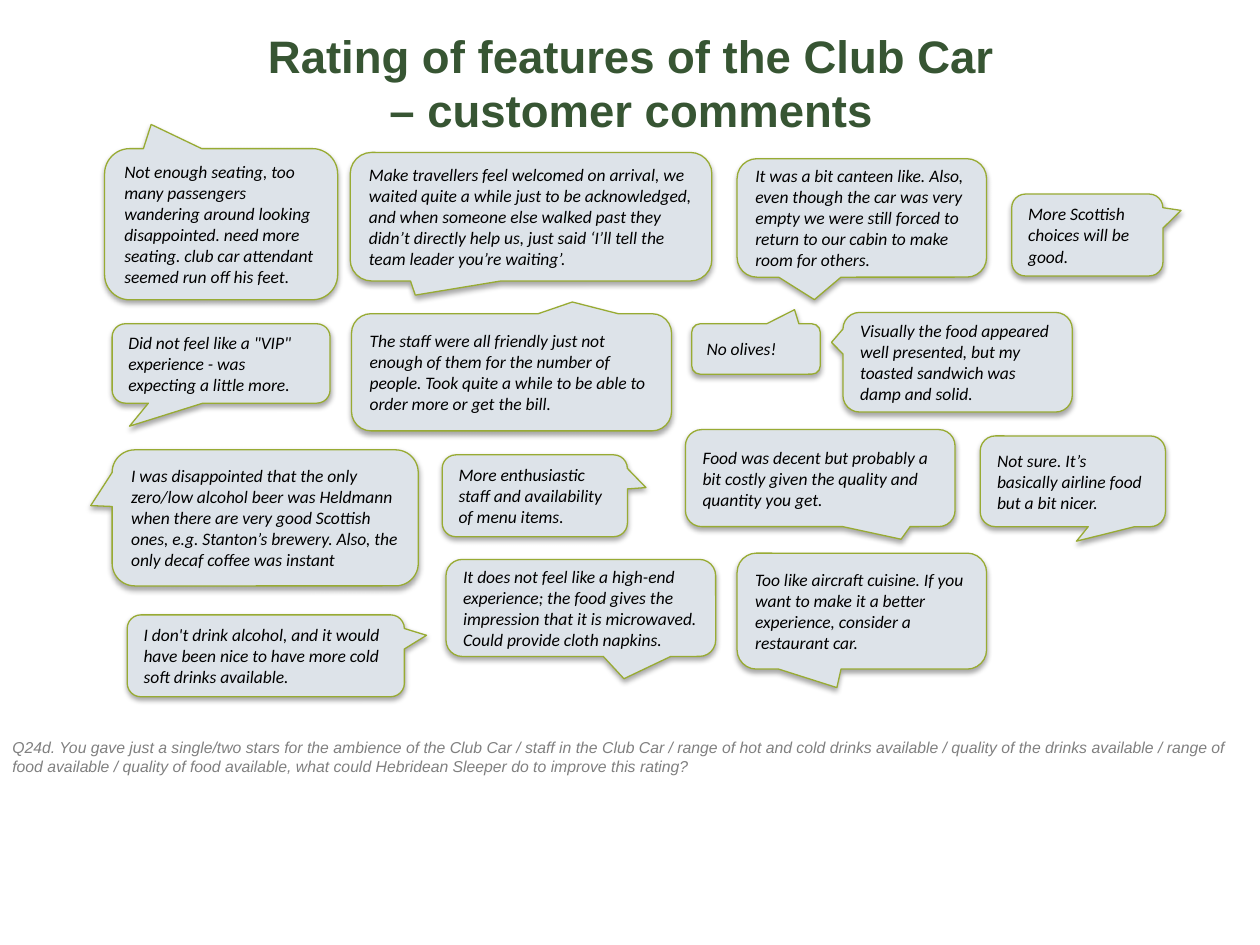
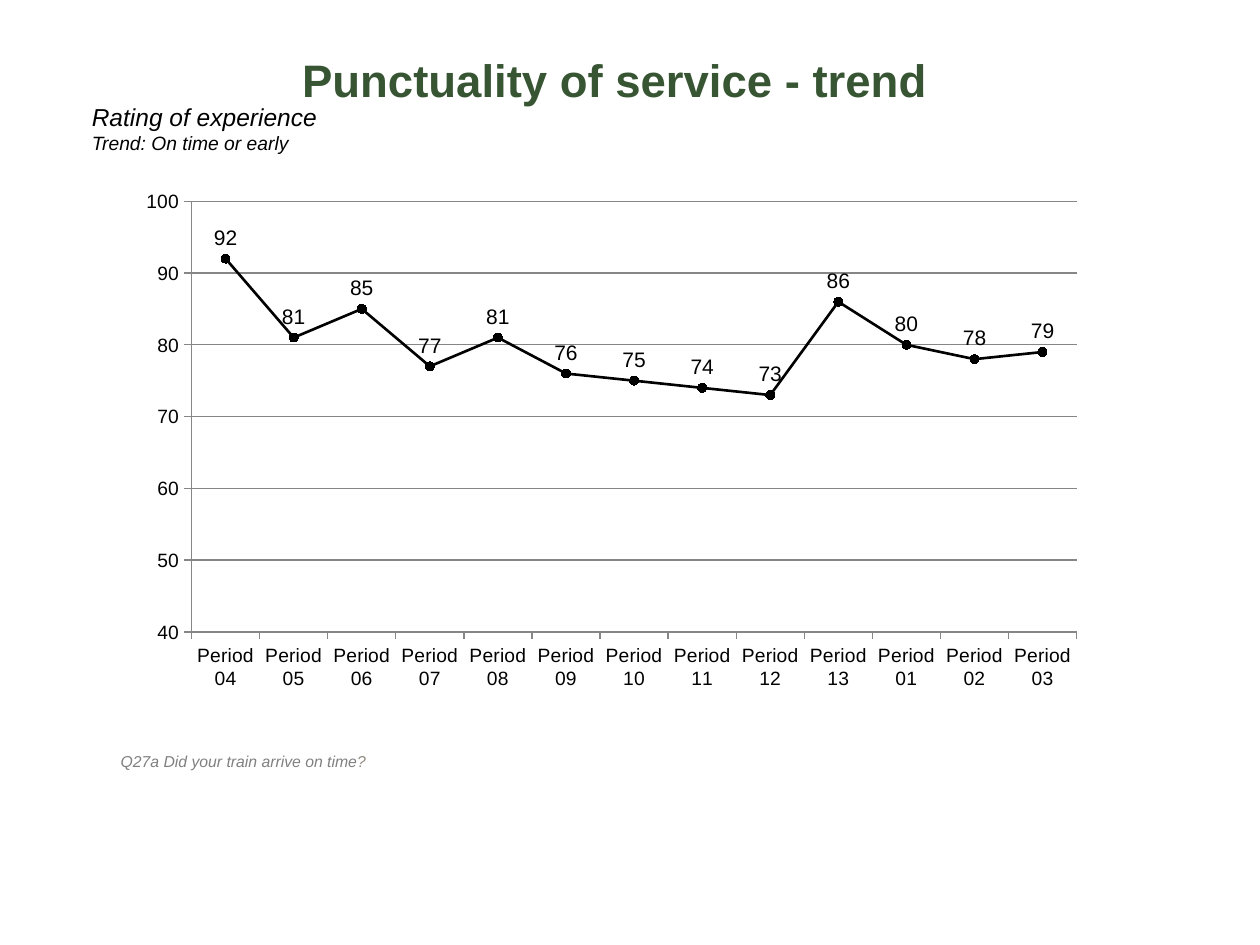
from lxml import etree
from pptx import Presentation
from pptx.chart.data import CategoryChartData
from pptx.dml.color import RGBColor
from pptx.enum.chart import XL_CHART_TYPE as Kind, XL_LABEL_POSITION as Spot
from pptx.enum.chart import XL_MARKER_STYLE as Mark, XL_TICK_MARK as Tick
from pptx.enum.shapes import MSO_SHAPE as Shape
from pptx.enum.text import MSO_ANCHOR as Anchor, MSO_AUTO_SIZE as Auto, PP_ALIGN as Align
from pptx.oxml import parse_xml
from pptx.oxml.ns import nsdecls, qn
from pptx.util import Inches, Pt

BLACK, GREY, WARM, GRID = "000000", "808080", "928B81", "868686"
GREEN, PALE, OLIVE, DARK = "375533", "DDE3E9", "98AB33", "1C2D32"
TITLE = {"name": "Arial", "size": Pt(26), "bold": True}
NOTE = {"name": "Arial", "size": Pt(9), "italic": True}
HEAD = {"name": "Arial", "size": Pt(14), "italic": True}
SUB = {**HEAD, "size": Pt(11)}
QUOTE = {"name": "Calibri", "size": Pt(10), "italic": True}

QUOTES = [
    ((2.79, 2.49, 2.54, 0.93), (0.19, -0.6),
     "The staff were all friendly just not enough of them for the number of people. "
     "Took quite a while to be able to order more or get the bill."),
    ((5.85, 4.39, 1.98, 0.92), (-0.1, 0.66),
     "Too like aircraft cuisine. If you want to make it a better experience, "
     "consider a restaurant car."),
    ((2.78, 1.21, 2.87, 1.02), (-0.32, 0.61),
     "Make travellers feel welcomed on arrival, we waited quite a while just to be "
     "acknowledged, and when someone else walked past they didn’t directly help us, "
     "just said ‘I’ll tell the team leader you’re waiting’."),
    ((0.83, 1.18, 1.85, 1.2), (-0.3, -0.66),
     "Not enough seating, too many passengers wandering around looking disappointed. "
     "need more seating. club car attendant seemed run off his feet."),
    ((7.78, 3.46, 1.47, 0.72), (0.02, 0.66),
     "Not sure. It’s basically airline food but a bit nicer."),
    ((5.44, 3.41, 2.14, 0.77), (0.3, 0.63),
     "Food was decent but probably a bit costly given the quality and quantity you get."),
    ((6.69, 2.48, 1.82, 0.79), (-0.55, -0.2),
     "Visually the food appeared well presented, but my toasted sandwich was damp and solid."),
    ((5.49, 2.57, 1.02, 0.4), (0.3, -0.78), "No olives!"),
    ((0.89, 3.57, 2.43, 1.08), (-0.57, -0.09),
     "I was disappointed that the only zero/low alcohol beer was Heldmann when there are "
     "very good Scottish ones, e.g. Stanton’s brewery. Also, the only decaf coffee was instant"),
    ((8.03, 1.54, 1.2, 0.65), (0.62, -0.3), "More Scottish choices will be good."),
    ((0.89, 2.57, 1.73, 0.63), (-0.42, 0.79),
     'Did not feel like a "VIP" experience - was expecting a little more.'),
    ((1.01, 4.88, 2.2, 0.65), (0.58, -0.25),
     "I don't drink alcohol, and it would have been nice to have more cold soft drinks available."),
    ((3.51, 3.61, 1.47, 0.65), (0.6, -0.1),
     "More enthusiastic staff and availability of menu items."),
    ((3.54, 4.44, 2.14, 0.77), (0.16, 0.73),
     "It does not feel like a high-end experience; the food gives the impression that it is "
     "microwaved. Could provide cloth napkins."),
    ((5.85, 1.26, 1.98, 0.94), (-0.19, 0.69),
     "It was a bit canteen like. Also, even though the car was very empty we were still "
     "forced to return to our cabin to make room for others."),
]
PERIODS = [*range(4, 14), *range(1, 4)]
RATES = [92, 81, 85, 77, 81, 76, 75, 74, 73, 86, 80, 78, 79]


def paint(part, tone):
    """Give a fill or line format a solid colour."""
    fill = getattr(part, "fill", part)
    fill.solid()
    fill.fore_color.rgb = RGBColor.from_string(tone)


def style(font, look, tone=BLACK):
    """Set font attributes and colour."""
    for key, value in look.items():
        setattr(font, key, value)
    font.color.rgb = RGBColor.from_string(tone)


def write(para, text, look, tone=BLACK):
    """Add a styled run to a paragraph."""
    run = para.add_run()
    run.text = text
    style(run.font, look, tone)


def add_title(slide, box, *lines):
    """Place the title placeholder and fill it with centred lines."""
    title = slide.shapes.title
    title.left, title.top, title.width, title.height = map(Inches, box)
    frame = title.text_frame
    frame.auto_size, frame.vertical_anchor = Auto.NONE, Anchor.TOP
    frame.margin_top = Inches(0.09)
    para = frame.paragraphs[0]
    para.alignment = Align.CENTER
    for i, line in enumerate(lines):
        if i:
            para.add_line_break()
        write(para, line, TITLE, GREEN)


def add_text(slide, box, *lines):
    """Add a wrapping text box of (text, look, colour) lines."""
    frame = slide.shapes.add_textbox(*map(Inches, box)).text_frame
    frame.word_wrap = True
    for i, line in enumerate(lines):
        write(frame.add_paragraph() if i else frame.paragraphs[0], *line)
    return frame


def add_quote(slide, box, tail, text):
    """Add a speech bubble with its tail and soft shadow."""
    bubble = slide.shapes.add_shape(Shape.ROUNDED_RECTANGULAR_CALLOUT, *map(Inches, box))
    bubble.adjustments[0], bubble.adjustments[1] = tail
    paint(bubble, PALE)
    paint(bubble.line, OLIVE)
    bubble.line.width = Pt(0.75)
    bubble.shadow.inherit = False
    bubble.element.spPr.find(qn("a:effectLst")).append(parse_xml(
        f'<a:outerShdw {nsdecls("a")} blurRad="{Pt(3.1)}" dist="{Pt(1.8)}" dir="5400000" '
        f'rotWithShape="0"><a:srgbClr val="{BLACK}"><a:alpha val="35000"/></a:srgbClr>'
        '</a:outerShdw>'))
    frame = bubble.text_frame
    frame.word_wrap, frame.vertical_anchor = True, Anchor.MIDDLE
    frame.paragraphs[0].alignment = Align.LEFT
    write(frame.paragraphs[0], text, QUOTE)


def set_plot(chart, **sides):
    """Fix the inner plot area as fractions of the chart."""
    area = chart.element.find(".//" + qn("c:plotArea"))
    for old in area.findall(qn("c:layout")):
        area.remove(old)
    layout = etree.Element(qn("c:layout"))
    manual = etree.SubElement(layout, qn("c:manualLayout"))
    parts = {"layoutTarget": "inner", "xMode": "edge", "yMode": "edge", **sides}
    for key, value in parts.items():
        etree.SubElement(manual, qn("c:" + key)).set("val", str(value))
    area.insert(0, layout)


def add_trend(slide, box):
    """Add the line chart of punctuality by period."""
    data = CategoryChartData()
    data.categories = [f"Period {n:02}" for n in PERIODS]
    data.add_series("Series 1", RATES)
    chart = slide.shapes.add_chart(Kind.LINE_MARKERS, *map(Inches, box), data).chart
    chart.has_legend = chart.has_title = False
    style(chart.font, {"name": "Arial", "size": Pt(18)})
    set_plot(chart, x=0.07, y=0.04, w=0.91, h=0.77)
    scale = chart.value_axis
    scale.minimum_scale, scale.maximum_scale, scale.major_unit = 40, 100, 10
    scale.has_major_gridlines = True
    for axis in (chart.category_axis, scale):
        axis.major_tick_mark, axis.minor_tick_mark = Tick.OUTSIDE, Tick.NONE
        style(axis.tick_labels.font, {"name": "Arial", "size": Pt(11)})
    for part in (chart.category_axis, scale, scale.major_gridlines):
        paint(part.format.line, GRID)
        part.format.line.width = Pt(0.75)
    plot = chart.plots[0]
    plot.vary_by_categories = False
    line = plot.series[0]
    line.smooth = False
    paint(line.format.line, BLACK)
    line.format.line.width = Pt(1.5)
    line.marker.style, line.marker.size = Mark.CIRCLE, 5
    paint(line.marker.format, DARK)
    paint(line.marker.format.line, BLACK)
    labels = line.data_labels
    labels.show_value, labels.position = True, Spot.ABOVE
    style(labels.font, {"name": "Arial", "size": Pt(12)})


def quote_slide(slide):
    """Build the customer comments slide."""
    add_title(slide, (0, 0.13, 10.02, 0.66),
              "Rating of features of the Club Car", "– customer comments")
    add_text(slide, (0, 5.81, 10, 0.4), (
        "Q24d. You gave just a single/two stars for the ambience of the Club Car / staff in "
        "the Club Car / range of hot and cold drinks available / quality of the drinks "
        "available / range of food available / quality of food available, what could "
        "Hebridean Sleeper do to improve this rating?", NOTE, GREY))
    for quote in QUOTES:
        add_quote(slide, *quote)


def trend_slide(slide):
    """Build the punctuality trend slide."""
    add_title(slide, (0.48, 0.32, 8.8, 0.66), "Punctuality of service - trend")
    add_text(slide, (0.63, 0.76, 5.91, 0.54),
             ("Rating of experience", HEAD), ("Trend: On time or early", SUB))
    add_trend(slide, (0.98, 1.42, 7.72, 4.44))
    note = add_text(slide, (0.86, 5.92, 7.73, 0.25),
                    ("Q27a Did your train arrive on time", NOTE, GREY))
    write(note.paragraphs[0], "?", NOTE, WARM)


def main():
    """Build and save the deck."""
    deck = Presentation()
    deck.slide_width, deck.slide_height = Inches(10), Inches(7.5)
    for build in (quote_slide, trend_slide):
        build(deck.slides.add_slide(deck.slide_layouts[5]))
    deck.save("out.pptx")


if __name__ == "__main__":
    main()
